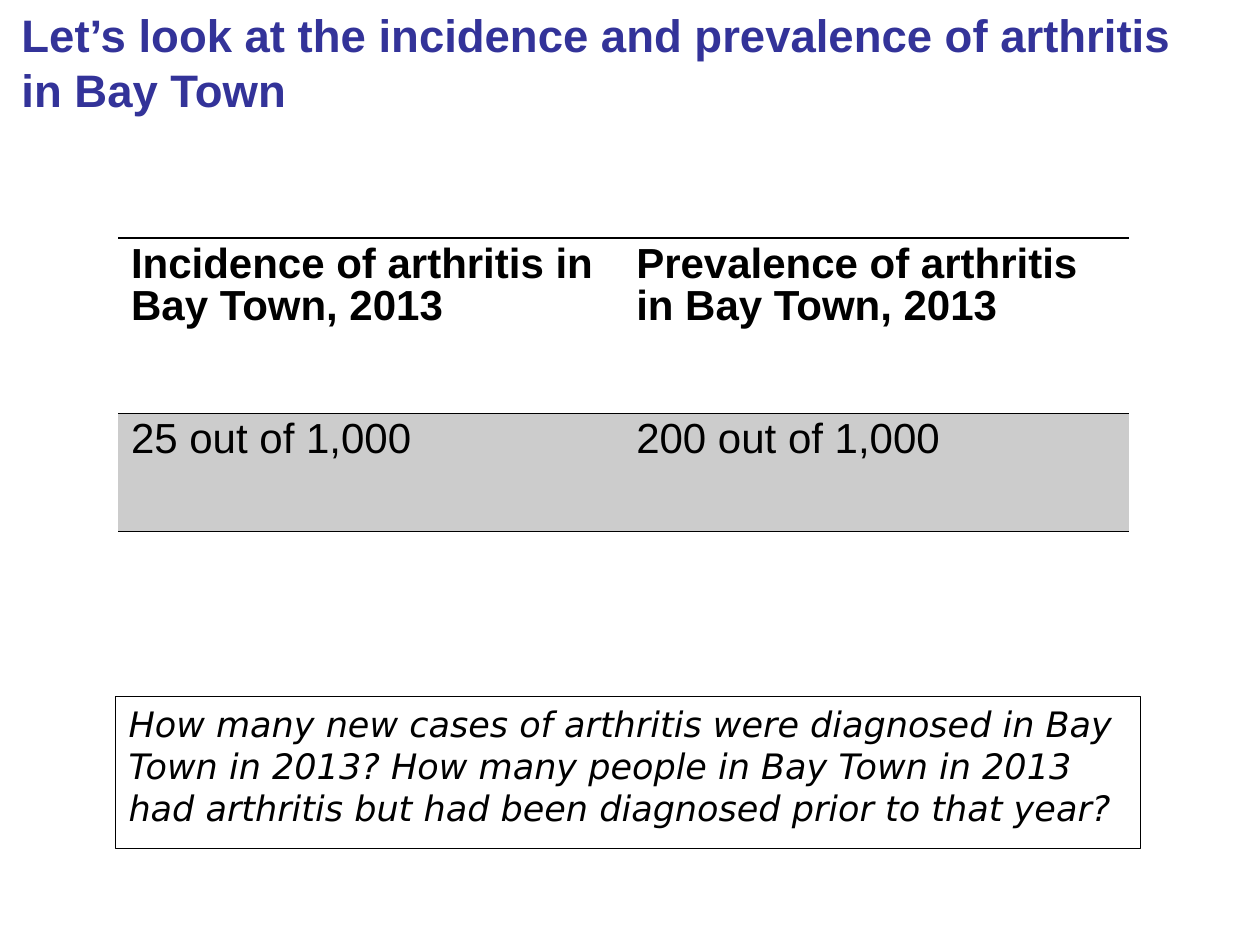
from lxml import etree
from pptx import Presentation
from pptx import util as u
from pptx.dml.color import RGBColor
from pptx.enum import text
from pptx.oxml import ns

NO_STYLE = "{2D5ABB26-0587-4C30-8999-92F81FD0307C}"
ROWS = [
    ["Incidence of arthritis in Bay Town, 2013",
     "Prevalence of arthritis in Bay Town, 2013"],
    ["25 out of 1,000", "200 out of 1,000"],
]


def color(value):
    """Turn a hex string into a colour."""
    return RGBColor.from_string(value)


def place(prs, s, x, y, w, h):
    """Position a shape by shares of the slide's size."""
    s.left, s.width = (round(prs.slide_width * v) for v in (x, w))
    s.top, s.height = (round(prs.slide_height * v) for v in (y, h))


def add_run(p, words, size, font, fill, bold=False, italic=False):
    """Append one formatted run to a paragraph."""
    r = p.add_run()
    r.text = words
    r.font.size, r.font.name = u.Pt(size), font
    r.font.bold, r.font.italic = bold, italic
    r.font.color.rgb = color(fill)


def fill_placeholder(s, words, size, font, fill, **style):
    """Write top-left text without a bullet into a placeholder."""
    tf = s.text_frame
    tf.word_wrap = True
    tf.auto_size = text.MSO_AUTO_SIZE.NONE
    tf.vertical_anchor = text.MSO_ANCHOR.TOP
    p = tf.paragraphs[0]
    pr = p._p.get_or_add_pPr()
    pr.set("marL", "0")
    pr.set("indent", "0")
    etree.SubElement(pr, ns.qn("a:buNone"))
    p.alignment = text.PP_ALIGN.LEFT
    p.space_before = u.Pt(0)
    add_run(p, words, size, font, fill, **style)


def add_border(cell, side, value, width=1):
    """Draw one edge of a table cell."""
    ln = etree.SubElement(cell._tc.get_or_add_tcPr(), ns.qn(f"a:ln{side}"),
                          w=str(u.Pt(width)))
    solid = etree.SubElement(ln, ns.qn("a:solidFill"))
    etree.SubElement(solid, ns.qn("a:srgbClr"), val=value)


def fill_cell(cell, words, header):
    """Format a header or value cell."""
    if header:
        add_border(cell, "T", "000000")
    add_border(cell, "B", "000000")
    if header:
        cell.fill.background()
    else:
        cell.fill.solid()
        cell.fill.fore_color.rgb = color("CCCCCC")
    p = cell.text_frame.paragraphs[0]
    p.line_spacing = 0.9
    add_run(p, words, 24, "Arial", "000000", bold=header)


def add_rates(prs, slide):
    """Add the table of incidence and prevalence."""
    s = slide.shapes.add_table(len(ROWS), len(ROWS[0]), 0, 0,
                               u.Inches(8.02), u.Inches(2.33))
    place(prs, s, 0.094, 0.252, 0.802, 0.311)
    table = s.table
    table._tbl.tblPr.find(ns.qn("a:tableStyleId")).text = NO_STYLE
    table.horz_banding = False
    for row, height in zip(table.rows, (1.39, 0.94)):
        row.height = u.Inches(height)
    for i, row in enumerate(ROWS):
        for j, words in enumerate(row):
            fill_cell(table.cell(i, j), words, header=i == 0)


def main():
    """Build and save the slide."""
    prs = Presentation()
    prs.slide_width, prs.slide_height = u.Inches(10), u.Inches(7.5)
    slide = prs.slides.add_slide(prs.slide_layouts[1])
    title, question = slide.placeholders
    place(prs, title, 0.007, 0.001, 0.938, 0.115)
    fill_placeholder(
        title, "Let’s look at the incidence and prevalence of arthritis "
        "in Bay Town", 26, "Arial", "333399", bold=True)
    place(prs, question, 0.092, 0.737, 0.813, 0.161)
    question.line.color.rgb = color("000000")
    question.line.width = u.Pt(0.5)
    fill_placeholder(
        question, "How many new cases of arthritis were diagnosed in Bay "
        "Town in 2013? How many people in Bay Town in 2013 had arthritis "
        "but had been diagnosed prior to that year?",
        20, "DejaVu Sans", "000000", italic=True)
    add_rates(prs, slide)
    prs.save("out.pptx")


if __name__ == "__main__":
    main()
